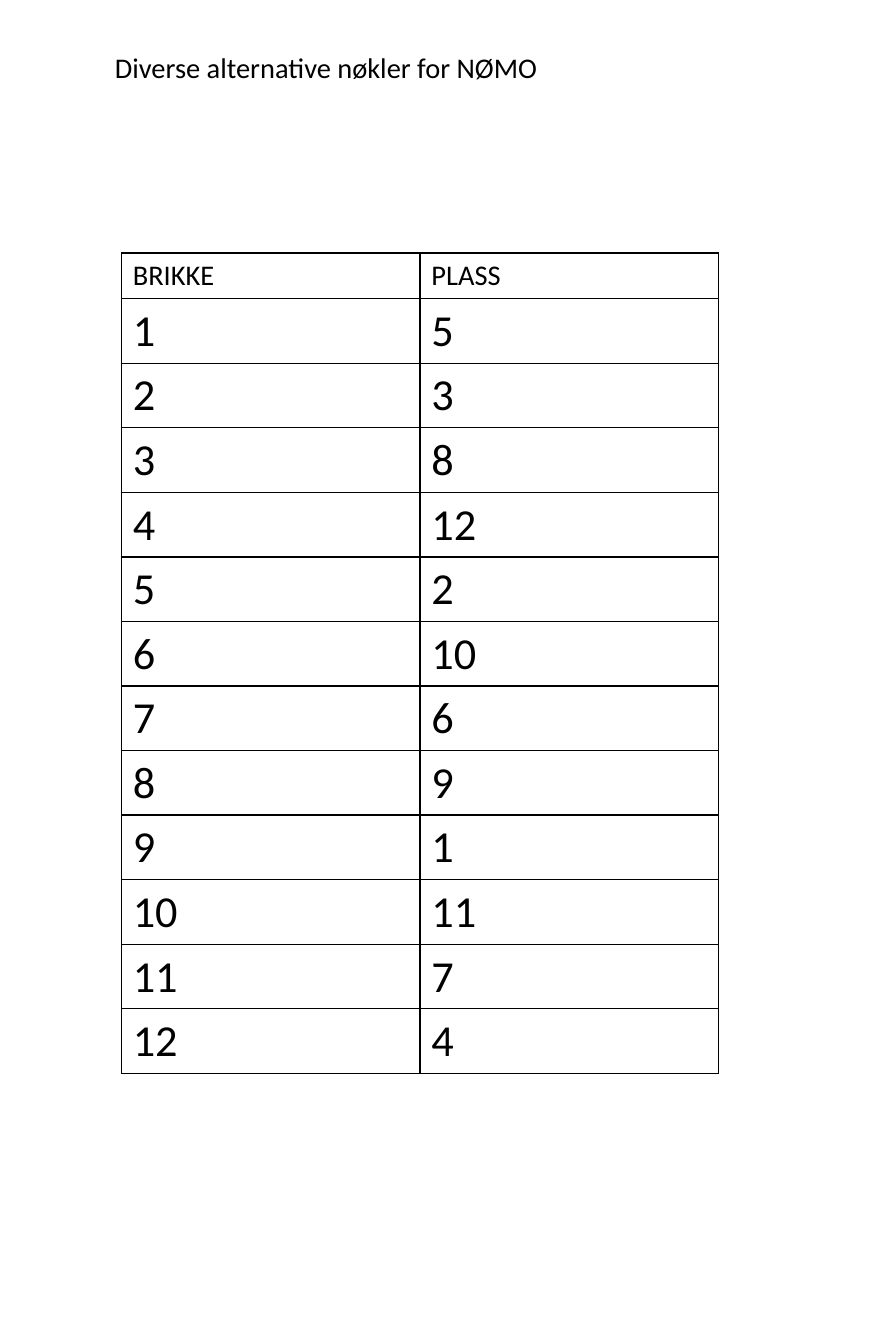
"""Build a portrait slide with a two-column key table for a tile game."""
from dataclasses import dataclass

from lxml import etree
from pptx import Presentation
from pptx import util as u
from pptx.dml.color import RGBColor
from pptx.enum import text
from pptx.oxml.ns import qn

PX = 8000


@dataclass(frozen=True)
class Theme:
    font: str = "Calibri"
    ink: str = "000000"
    label_size: int = 18
    number_size: int = 28
    border_points: int = 1


@dataclass(frozen=True)
class Box:
    left: int
    top: int
    width: int
    height: int

    def emu(self) -> tuple[int, ...]:
        return tuple(px(n) for n in (self.left, self.top, self.width, self.height))


@dataclass(frozen=True)
class KeyRow:
    tile: str
    place: str
    size: int


THEME = Theme()
SLIDE_WIDTH, SLIDE_HEIGHT = 900, 1350
TITLE_BOX = Box(104, 45, 680, 46)
TABLE_BOX = Box(122, 254, 600, 824)
ROW_HEIGHT = 46
PLACES = (5, 3, 8, 12, 2, 10, 6, 9, 1, 11, 7, 4)


def px(length: int) -> int:
    return u.Emu(length * PX)


def write(frame, content: str, *, size: int, color: str = THEME.ink,
          align=text.PP_ALIGN.LEFT) -> None:
    paragraph = frame.paragraphs[0]
    paragraph.alignment = align
    run = paragraph.add_run()
    run.text = content
    run.font.name = THEME.font
    run.font.size = u.Pt(size)
    run.font.color.rgb = RGBColor.from_string(color)


def add_borders(cell) -> None:
    properties = cell._tc.get_or_add_tcPr()
    for side in ("lnL", "lnR", "lnT", "lnB"):
        line = etree.SubElement(properties, qn(f"a:{side}"),
                                w=str(u.Pt(THEME.border_points)))
        fill = etree.SubElement(line, qn("a:solidFill"))
        etree.SubElement(fill, qn("a:srgbClr"), val=THEME.ink)


def set_title(slide, content: str) -> None:
    title = slide.shapes.title
    title.left, title.top, title.width, title.height = TITLE_BOX.emu()
    frame = title.text_frame
    frame.word_wrap = True
    frame.auto_size = text.MSO_AUTO_SIZE.SHAPE_TO_FIT_TEXT
    frame.vertical_anchor = text.MSO_ANCHOR.TOP
    write(frame, content, size=THEME.label_size)


def add_key_table(slide, rows: list[KeyRow]) -> None:
    shape = slide.shapes.add_table(len(rows), 2, *TABLE_BOX.emu())
    table = shape.table
    table.first_row = table.horz_banding = False
    for table_row, row in zip(table.rows, rows):
        table_row.height = px(ROW_HEIGHT)
        for cell, content in zip(table_row.cells, (row.tile, row.place)):
            add_borders(cell)
            cell.fill.background()
            write(cell.text_frame, content, size=row.size)
    shape.height = px(TABLE_BOX.height)


def main() -> None:
    presentation = Presentation()
    presentation.slide_width = px(SLIDE_WIDTH)
    presentation.slide_height = px(SLIDE_HEIGHT)
    slide = presentation.slides.add_slide(presentation.slide_layouts[5])
    set_title(slide, "Diverse alternative nøkler for NØMO")
    header = KeyRow("BRIKKE", "PLASS", THEME.label_size)
    numbers = [KeyRow(str(tile), str(place), THEME.number_size)
               for tile, place in enumerate(PLACES, start=1)]
    add_key_table(slide, [header, *numbers])
    presentation.save("out.pptx")


if __name__ == "__main__":
    main()
